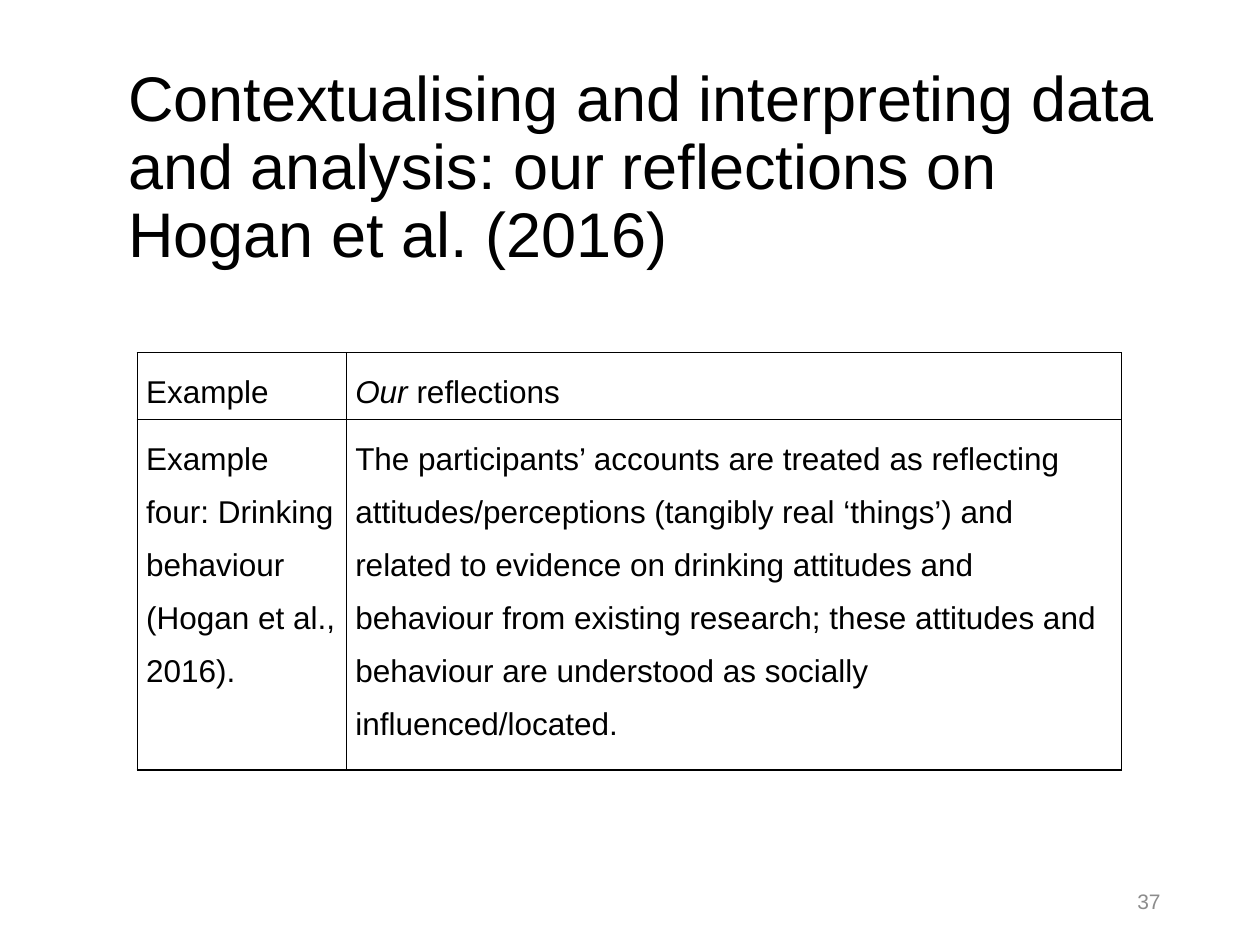
from dataclasses import dataclass

from lxml import etree
from pptx import Presentation
from pptx.dml.color import RGBColor
from pptx.enum.text import MSO_ANCHOR, PP_ALIGN
from pptx.oxml.ns import qn
from pptx.util import Inches, Pt

MIDDLE = MSO_ANCHOR.MIDDLE
LEFT, RIGHT = PP_ALIGN.LEFT, PP_ALIGN.RIGHT
WIDTH, HEIGHT = Inches(10), Inches(7.5)


@dataclass(frozen=True)
class Theme:
    """Colours, font and type sizes of the slide."""
    font: str = "Arial"
    ink: str = "000000"
    muted: str = "8C8C8C"
    title: int = 36
    body: int = 18
    small: int = 12
    border: int = 1


@dataclass(frozen=True)
class Box:
    """A place given in percent of the slide's width and height."""
    left: float
    top: float
    width: float
    height: float

    def emu(self) -> tuple:
        """Return left, top, width and height as slide lengths."""
        return (across(self.left), down(self.top),
                across(self.width), down(self.height))


@dataclass(frozen=True)
class Run:
    """A piece of text in one style."""
    text: str
    size: int
    color: str
    italic: bool = False


THEME = Theme()
TITLE_BOX = Box(9.2, 6.27, 86.2, 23.2)
TABLE_BOX = Box(10.9, 37.33, 78.1, 36.54)
NUMBER_BOX = Box(70.6, 92.67, 22.5, 5.33)
COLUMNS = (16.6, 61.5)
ROWS = (6.27, 30.27)


def across(percent: float) -> int:
    """Turn a share of the slide's width into a length."""
    return round(WIDTH * percent / 100)


def down(percent: float) -> int:
    """Turn a share of the slide's height into a length."""
    return round(HEIGHT * percent / 100)


def body(text: str, italic: bool = False) -> Run:
    """Make a run in the table's text style."""
    return Run(text, THEME.body, THEME.ink, italic)


CELLS = (
    ((body("Example"),), (body("Our", True), body(" reflections"))),
    ((body("Example four: Drinking behaviour (Hogan et al., 2016)."),),
     (body("The participants’ accounts are treated as reflecting "
           "attitudes/perceptions (tangibly real ‘things’) and related to "
           "evidence on drinking attitudes and behaviour from existing "
           "research; these attitudes and behaviour are understood as "
           "socially influenced/located."),)),
)


def write(tf, runs: tuple, spacing: float, align=LEFT) -> None:
    """Fill the first paragraph of a text frame run by run."""
    p = tf.paragraphs[0]
    p.line_spacing, p.alignment = spacing, align
    for run in runs:
        r = p.add_run()
        r.text = run.text
        r.font.name, r.font.size = THEME.font, Pt(run.size)
        r.font.italic = run.italic
        r.font.color.rgb = RGBColor.from_string(run.color)


def add_text(s, box: Box, run: Run, spacing: float = 1.0, align=LEFT) -> None:
    """Add a wrapped, vertically centred text box."""
    tf = s.shapes.add_textbox(*box.emu()).text_frame
    tf.word_wrap, tf.vertical_anchor = True, MIDDLE
    write(tf, (run,), spacing, align)


def add_borders(cell) -> None:
    """Draw a thin line on every side of a cell."""
    tc_pr = cell._tc.get_or_add_tcPr()
    for side in ("lnL", "lnR", "lnT", "lnB"):
        ln = etree.SubElement(tc_pr, qn(f"a:{side}"), w=str(Pt(THEME.border)))
        fill = etree.SubElement(ln, qn("a:solidFill"))
        etree.SubElement(fill, qn("a:srgbClr"), val=THEME.ink)


def add_reflections(s) -> None:
    """Add the bordered table of examples and reflections."""
    table = s.shapes.add_table(len(ROWS), len(COLUMNS), *TABLE_BOX.emu()).table
    table.first_row = table.horz_banding = False
    for column, share in zip(table.columns, COLUMNS):
        column.width = across(share)
    for row, share, contents in zip(table.rows, ROWS, CELLS):
        row.height = down(share)
        for cell, runs in zip(row.cells, contents):
            cell.margin_left = cell.margin_right = Inches(0.07)
            cell.margin_top = cell.margin_bottom = Inches(0.04)
            add_borders(cell)
            cell.fill.background()
            write(cell.text_frame, runs, 1.5)


def main() -> None:
    """Build and save the slide."""
    prs = Presentation()
    prs.slide_width, prs.slide_height = WIDTH, HEIGHT
    s = prs.slides.add_slide(prs.slide_layouts[6])
    add_text(s, TITLE_BOX, Run(
        "Contextualising and interpreting data and analysis: "
        "our reflections on Hogan et al. (2016)",
        THEME.title, THEME.ink), 0.9)
    add_reflections(s)
    add_text(s, NUMBER_BOX, Run("37", THEME.small, THEME.muted), align=RIGHT)
    prs.save("out.pptx")


if __name__ == "__main__":
    main()
